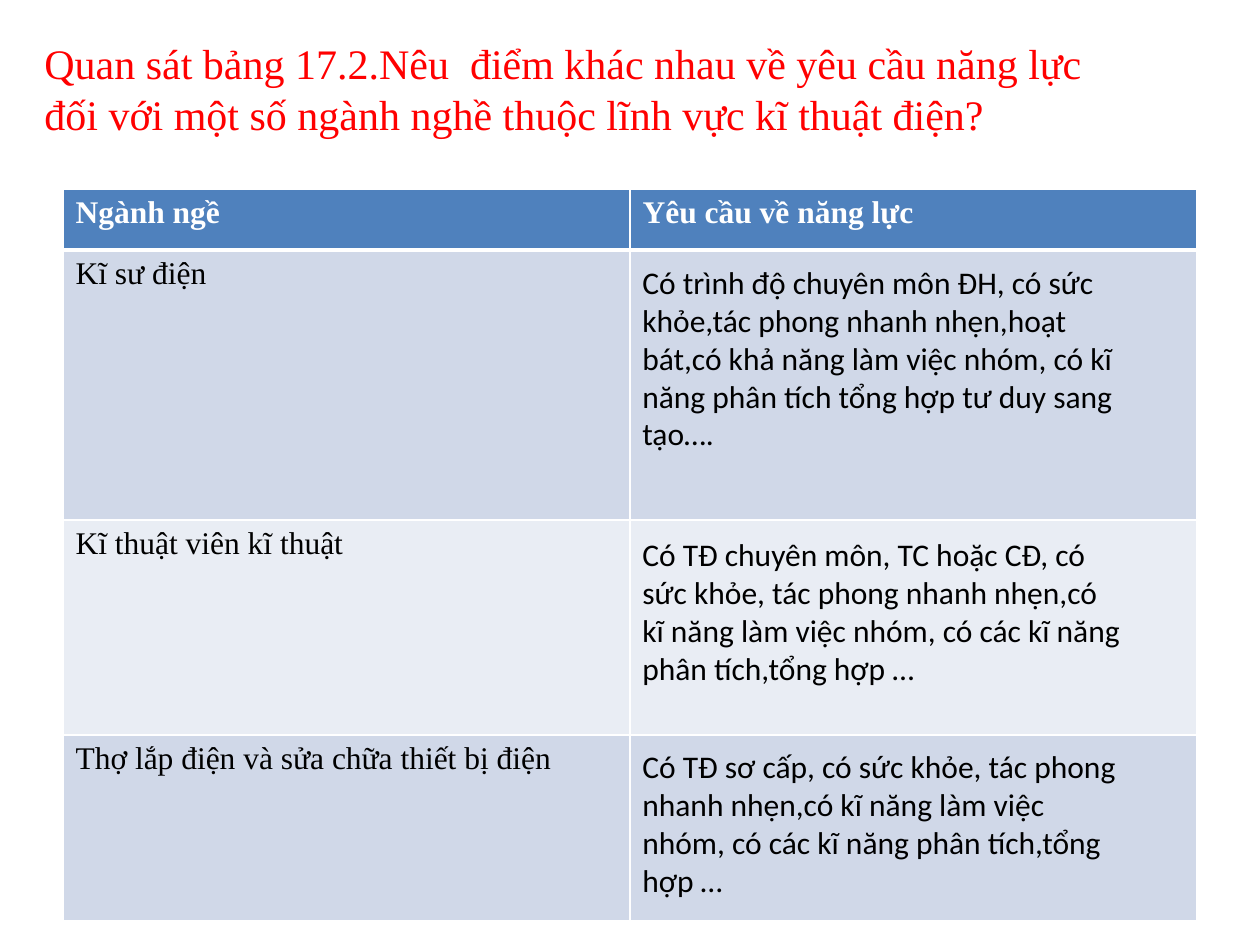
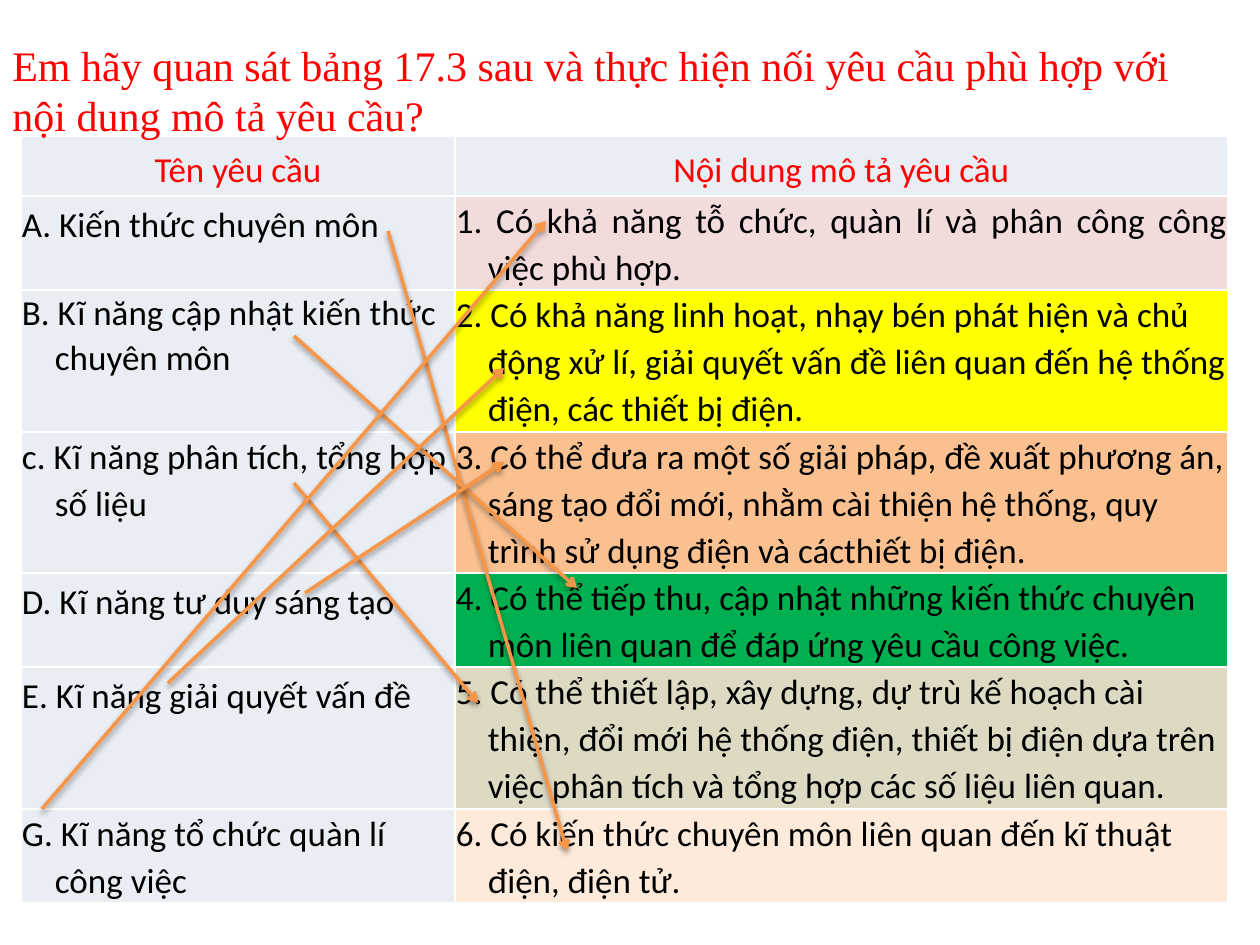
"""Build two slides on careers in electrical engineering: a skills table and a matching exercise."""
from lxml import etree
from pptx import Presentation
from pptx.dml.color import RGBColor
from pptx.enum.shapes import MSO_CONNECTOR as Connector
from pptx.enum.text import MSO_ANCHOR as Anchor, PP_ALIGN as Align
from pptx.oxml import parse_xml
from pptx.oxml.ns import nsdecls, qn
from pptx.util import Emu, Pt

PX_PER_INCH = 126
SERIF, SANS = "Times New Roman", "Calibri"
RED, BLACK, WHITE, ORANGE = "FF0000", "000000", "FFFFFF", "F79646"
BLUE, BAND_DARK, BAND_LIGHT = "4F81BD", "D0D8E8", "E9EDF4"

TITLE = {"name": SERIF, "size": 24, "color": RED}
HEADER = {"name": SERIF, "size": 18, "color": WHITE, "bold": True}
JOB = {"name": SERIF, "size": 18, "color": BLACK, "bold": False}
ANSWER = {"name": SANS, "size": 18, "color": BLACK}
MATCH_HEADER = {"name": SANS, "size": 20, "color": RED}
MATCH = {"name": SANS, "size": 20, "color": BLACK}

SKILLS_TITLE = ("Quan sát bảng 17.2.Nêu  điểm khác nhau về yêu cầu năng lực "
                "đối với một số ngành nghề thuộc lĩnh vực kĩ thuật điện?")
SKILLS_HEADER = ("Ngành ngề", "Yêu cầu về năng lực")
JOBS = ["Kĩ sư điện", "Kĩ thuật viên kĩ thuật", "Thợ lắp điện và sửa chữa thiết bị điện"]
SKILLS_ROWS = [61, 270, 215, 186]
ANSWERS = [
    (257, 204, "Có trình độ chuyên môn ĐH, có sức khỏe,tác phong nhanh nhẹn,hoạt bát,"
               "có khả năng làm việc nhóm, có kĩ năng phân tích tổng hợp tư duy sang tạo…."),
    (529, 165, "Có TĐ chuyên môn, TC hoặc CĐ, có sức khỏe, tác phong nhanh nhẹn,"
               "có kĩ năng làm việc nhóm, có các kĩ năng phân tích,tổng hợp …"),
    (741, 165, "Có TĐ sơ cấp, có sức khỏe, tác phong nhanh nhẹn,có kĩ năng làm việc nhóm, "
               "có các kĩ năng phân tích,tổng hợp …"),
]

MATCH_TITLE = ("Em hãy quan sát bảng 17.3 sau và thực hiện nối yêu cầu phù hợp với "
               "nội dung mô tả yêu cầu?")
MATCH_HEADINGS = ("Tên yêu cầu", "Nội dung mô tả yêu cầu")
MATCH_ROWS = [60, 94, 142, 141, 94, 142, 94]
NAMES = [
    ("A. Kiến thức chuyên môn", 1.19, 0, 0),
    ("B. Kĩ năng cập nhật kiến thức chuyên môn", 1.05, 0, 33),
    ("c. Kĩ năng phân tích, tổng hợp số liệu", 1.1, 0, 33),
    ("D. Kĩ năng tư duy sáng tạo", 1.19, 4, 0),
    ("E. Kĩ năng giải quyết vấn đề", 1.19, 0, 0),
    ("G. Kĩ năng tổ chức quàn lí công việc", 1.1, 0, 33),
]
DESCRIPTIONS = [
    ("F2DCDB", 4, Align.JUSTIFY,
     "1. Có khả năng tỗ chức, quàn lí và phân công công việc phù hợp."),
    ("FFFF00", 4, Align.LEFT,
     "2. Có khả năng linh hoạt, nhạy bén phát hiện và chủ động xử lí, "
     "giải quyết vấn đề liên quan đến hệ thống điện, các thiết bị điện."),
    ("FAC090", 0, Align.LEFT,
     "3. Có thể đưa ra một số giải pháp, đề xuất phương án, sáng tạo đổi mới, "
     "nhằm cài thiện hệ thống, quy trình sử dụng điện và cácthiết bị điện."),
    ("00B050", 0, Align.LEFT,
     "4. Có thể tiếp thu, cập nhật những kiến thức chuyên môn liên quan "
     "để đáp ứng yêu cầu công việc."),
    ("DDD9C3", 0, Align.LEFT,
     "5. Có thể thiết lập, xây dựng, dự trù kế hoạch cài thiện, đổi mới hệ thống điện, "
     "thiết bị điện dựa trên việc phân tích và tổng hợp các số liệu liên quan."),
    ("FDEADA", 0, Align.LEFT,
     "6. Có kiến thức chuyên môn liên quan đến kĩ thuật điện, điện tử."),
]
ARROWS = [
    (388, 231, 567, 851), (294, 336, 577, 588), (294, 483, 478, 703),
    (305, 593, 504, 462), (168, 683, 504, 368), (42, 809, 546, 221),
]


def px(length):
    return Emu(round(length * 914400 / PX_PER_INCH))


def rgb(color):
    return RGBColor.from_string(color)


def apply(target, values):
    for name, value in values.items():
        setattr(target, name, value)


def write(frame, text, style, **layout):
    para = frame.paragraphs[0]
    apply(para, layout)
    span = para.add_run()
    span.text = text
    values = dict(style, size=Pt(style["size"]))
    span.font.color.rgb = rgb(values.pop("color"))
    apply(span.font, values)
    return para


def hang(para, indent):
    props = para._p.get_or_add_pPr()
    props.set("marL", str(px(indent)))
    props.set("indent", str(-px(indent)))


def add_text(page, area, text, style, anchor=Anchor.TOP):
    frame = page.shapes.add_textbox(*map(px, area)).text_frame
    apply(frame, {"word_wrap": True, "vertical_anchor": anchor})
    write(frame, text, style)


def paint(cell, color, bottom=1):
    cell.fill.solid()
    cell.fill.fore_color.rgb = rgb(color)
    props = cell._tc.get_or_add_tcPr()
    for place, (side, width) in enumerate(zip("LRTB", (1, 1, 1, bottom))):
        props.insert(place, parse_xml(
            f'<a:ln{side} {nsdecls("a")} w="{Pt(width)}"><a:solidFill>'
            f'<a:srgbClr val="{WHITE}"/></a:solidFill></a:ln{side}>'))


def add_grid(page, left, top, columns, rows):
    area = left, top, sum(columns), sum(rows)
    table = page.shapes.add_table(len(rows), len(columns), *map(px, area)).table
    apply(table, {"first_row": False, "horz_banding": False})
    for column, width in zip(table.columns, columns):
        column.width = px(width)
    for row, height in zip(table.rows, rows):
        row.height = px(height)
    return table


def add_arrow(page, ends):
    arrow = page.shapes.add_connector(Connector.STRAIGHT, *map(px, ends))
    arrow.line.color.rgb = rgb(ORANGE)
    arrow.line.width = Pt(2)
    etree.SubElement(arrow.line._get_or_add_ln(), qn("a:tailEnd"), type="arrow")
    effects = etree.SubElement(arrow._element.spPr, qn("a:effectLst"))
    shadow = etree.SubElement(effects, qn("a:outerShdw"), blurRad="40000", dist="20000",
                              dir="5400000", rotWithShape="0")
    shade = etree.SubElement(shadow, qn("a:srgbClr"), val=BLACK)
    etree.SubElement(shade, qn("a:alpha"), val="38000")


def build_skills(page):
    add_text(page, (32, 9, 1124, 158), SKILLS_TITLE, TITLE, Anchor.MIDDLE)
    table = add_grid(page, 63, 189, [567, 567], SKILLS_ROWS)
    for column, heading in enumerate(SKILLS_HEADER):
        cell = table.cell(0, column)
        paint(cell, BLUE, bottom=3)
        write(cell.text_frame, heading, HEADER)
    for row, job in enumerate(JOBS, 1):
        for column in range(2):
            paint(table.cell(row, column), BAND_DARK if row % 2 else BAND_LIGHT)
        write(table.cell(row, 0).text_frame, job, JOB)
    for top, height, answer in ANSWERS:
        add_text(page, (630, top, 504, height), answer, ANSWER)


def build_matching(page):
    table = add_grid(page, 21, 136, [434, 773], MATCH_ROWS)
    for cell in table.iter_cells():
        apply(cell, {"margin_left": px(1), "margin_right": px(1),
                     "margin_top": 0, "margin_bottom": 0})
    for column, heading in enumerate(MATCH_HEADINGS):
        cell = table.cell(0, column)
        paint(cell, BAND_LIGHT)
        cell.vertical_anchor = Anchor.MIDDLE
        write(cell.text_frame, heading, MATCH_HEADER, alignment=Align.CENTER, line_spacing=1.19)
    for row, (name, description) in enumerate(zip(NAMES, DESCRIPTIONS), 1):
        text, spacing, before, indent = name
        cell = table.cell(row, 0)
        paint(cell, BAND_LIGHT)
        hang(write(cell.text_frame, text, MATCH, line_spacing=spacing,
                   space_before=Pt(before)), indent)
        color, before, align, text = description
        cell = table.cell(row, 1)
        paint(cell, color)
        hang(write(cell.text_frame, text, MATCH, line_spacing=1.1, alignment=align,
                   space_before=Pt(before)), 32)
    add_text(page, (0, 33, 1236, 115), MATCH_TITLE, TITLE)
    for ends in ARROWS:
        add_arrow(page, ends)


def main():
    deck = Presentation()
    apply(deck, {"slide_width": px(1260), "slide_height": px(945)})
    for build in (build_skills, build_matching):
        build(deck.slides.add_slide(deck.slide_layouts[6]))
    deck.save("out.pptx")


if __name__ == "__main__":
    main()
